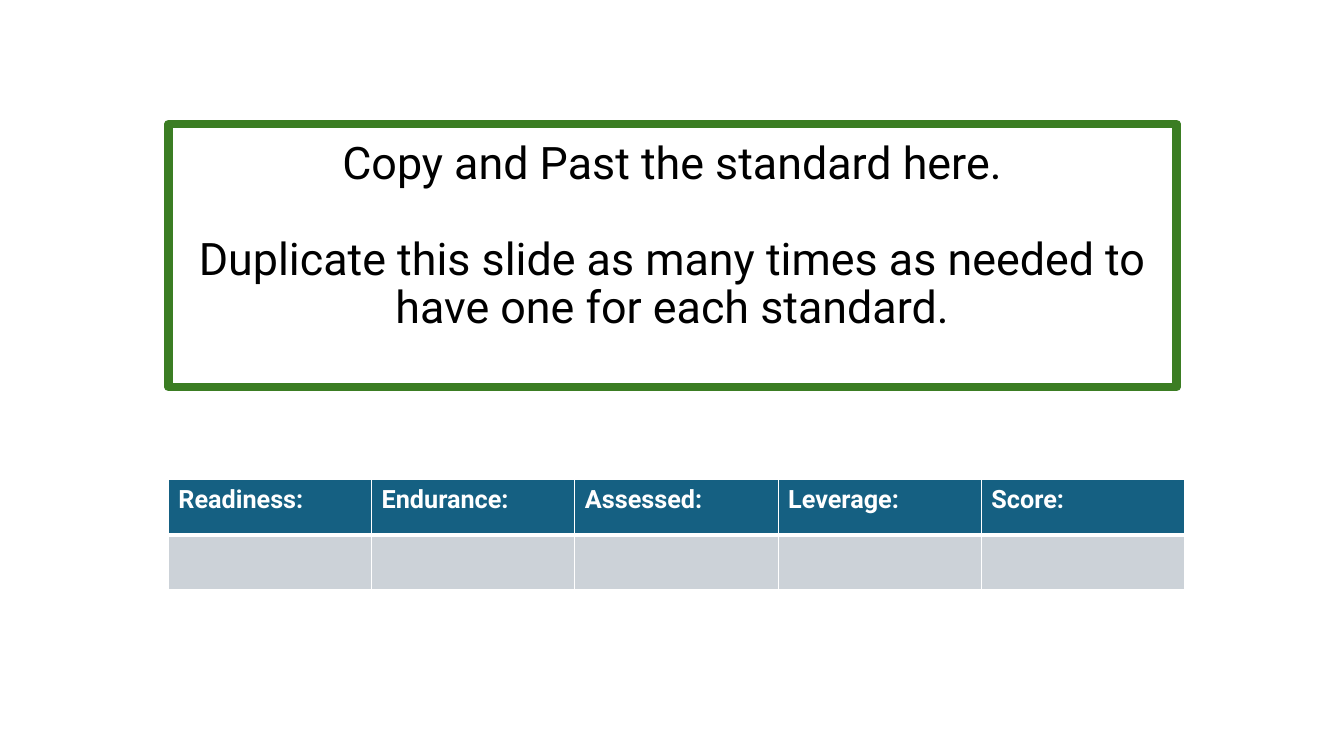
"""Build a slide with a standard prompt above a scoring table."""
import pptx
import pptx.dml.color
import pptx.enum.shapes
import pptx.enum.text
import pptx.oxml
import pptx.oxml.ns
import pptx.util

Inches = pptx.util.Inches
Pt = pptx.util.Pt
ALIGN = pptx.enum.text.PP_ALIGN


def rgb(value):
    return pptx.dml.color.RGBColor.from_string(value)


def write(paragraph, text, size=18, color="000000", bold=False,
          align=ALIGN.LEFT, spacing=1.0, before=0):
    paragraph.alignment = align
    paragraph.line_spacing = spacing
    paragraph.space_before = Pt(before)
    run = paragraph.add_run()
    run.text = text
    run.font.name = "Roboto"
    run.font.size = Pt(size)
    run.font.bold = bold
    run.font.color.rgb = rgb(color)


class StandardSlide:
    green = "3B7D23"
    blue = "156082"
    gray = "CCD2D8"
    white = "FFFFFF"

    def __init__(self, deck):
        self.slide = deck.slides.add_slide(deck.slide_layouts[6])

    def prompt(self, left, top, width, height, lines):
        box = self.slide.shapes.add_shape(
            pptx.enum.shapes.MSO_SHAPE.RECTANGLE,
            Inches(left), Inches(top), Inches(width), Inches(height))
        box.shadow.inherit = False
        box.fill.background()
        box.line.color.rgb = rgb(self.green)
        box.line.width = Pt(6)
        frame = box.text_frame
        frame.word_wrap = True
        frame.vertical_anchor = pptx.enum.text.MSO_ANCHOR.BOTTOM
        frame.margin_bottom = Inches(0.53)
        for index, line in enumerate(lines):
            paragraph = frame.add_paragraph() if index else frame.paragraphs[0]
            write(paragraph, line, size=32, align=ALIGN.CENTER,
                  spacing=0.9, before=34 if index else 0)

    def border(self, cell, **widths):
        properties = cell._tc.get_or_add_tcPr()
        for side in "LRTB":
            properties.append(pptx.oxml.parse_xml(
                f'<a:ln{side} {pptx.oxml.ns.nsdecls("a")} '
                f'w="{Pt(widths.get(side, 1))}"><a:solidFill>'
                f'<a:srgbClr val="{self.white}"/></a:solidFill></a:ln{side}>'))

    def scores(self, left, top, width, height, headings):
        table = self.slide.shapes.add_table(
            2, len(headings), Inches(left), Inches(top),
            Inches(width), Inches(height)).table
        table.horz_banding = False
        for column, heading in enumerate(headings):
            header, score = table.cell(0, column), table.cell(1, column)
            self.border(header, B=3)
            self.border(score, T=3)
            for cell, color in ((header, self.blue), (score, self.gray)):
                cell.fill.solid()
                cell.fill.fore_color.rgb = rgb(color)
            write(header.text_frame.paragraphs[0], heading,
                  color=self.white, bold=True)


def main():
    deck = pptx.Presentation()
    deck.slide_width = Inches(13.33)
    deck.slide_height = Inches(7.5)
    standard = StandardSlide(deck)
    standard.prompt(1.67, 1.23, 10, 2.61, [
        "Copy and Past the standard here.",
        "Duplicate this slide as many times as needed to have one for each standard.",
    ])
    standard.scores(1.67, 4.76, 10.08, 1.09, [
        "Readiness:", "Endurance:", "Assessed:", "Leverage:", "Score:"])
    deck.save("out.pptx")


if __name__ == "__main__":
    main()
